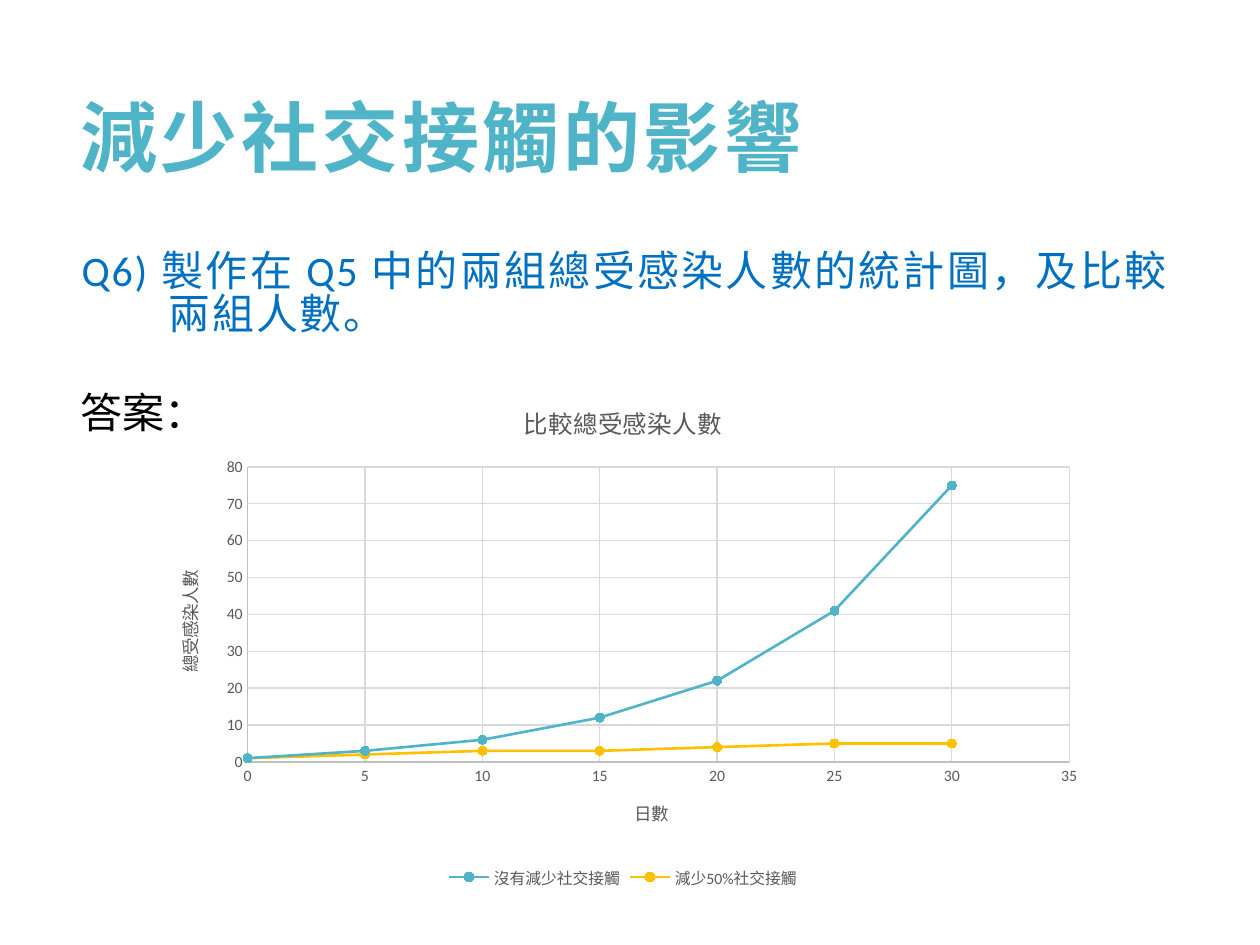
"""Build the slide on the effect of reducing social contact."""
from pptx import Presentation
from pptx.chart.data import XyChartData
from pptx.dml.color import RGBColor
from pptx.enum import chart as ch, text
from pptx.util import Inches, Pt

TEAL = RGBColor(0x50, 0xB4, 0xC8)
BLUE = RGBColor(0x00, 0x70, 0xC0)
GOLD = RGBColor(0xFF, 0xC0, 0x00)
BLACK = RGBColor(0x00, 0x00, 0x00)
GRAY = RGBColor(0x59, 0x59, 0x59)
AXIS = RGBColor(0xBF, 0xBF, 0xBF)
GRID = RGBColor(0xD9, 0xD9, 0xD9)
FONT = "Calibri"


def style(font, size, color, bold=False):
    font.name = FONT
    font.size = Pt(size)
    font.bold = bold
    font.color.rgb = color


def add_text(s, words, box, size, color, bold=False, spacing=0):
    tf = s.shapes.add_textbox(*map(Inches, box)).text_frame
    tf.word_wrap = True
    tf.text = words
    p = tf.paragraphs[0]
    r = p.runs[0]
    style(r.font, size, color, bold)
    if spacing:
        r.font._element.set("spc", str(spacing * 100))
    return tf


prs = Presentation()
prs.slide_width, prs.slide_height = Inches(10), Inches(7.5)
s = prs.slides.add_slide(prs.slide_layouts[6])

tf = add_text(s, "減少社交接觸的影響", (0.54, 0.55, 8.84, 1.05), 44, TEAL, True, 2)
tf.vertical_anchor = text.MSO_ANCHOR.MIDDLE

tf = add_text(s, "Q6) 製作在 Q5 中的兩組總受感染人數的統計圖，及比較兩組人數。",
              (0.55, 1.95, 8.82, 4.35), 24, BLUE, spacing=1)
p = tf.paragraphs[0]
p.alignment = text.PP_ALIGN.JUSTIFY
p.line_spacing = 0.85
p.space_before = Pt(13)
pPr = p._p.get_or_add_pPr()
pPr.set("marL", str(Inches(0.69)))
pPr.set("indent", str(-Inches(0.69)))

groups = [
    ("沒有減少社交接觸", TEAL, [1, 3, 6, 12, 22, 41, 75]),
    ("減少50%社交接觸", GOLD, [1, 2, 3, 3, 4, 5, 5]),
]
data = XyChartData()
for name, color, totals in groups:
    series = data.add_series(name)
    for day, total in zip(range(0, 31, 5), totals):
        series.add_data_point(day, total)
chart = s.shapes.add_chart(
    ch.XL_CHART_TYPE.XY_SCATTER_LINES, Inches(1.19), Inches(3.02),
    Inches(7.51), Inches(4.07), data).chart
style(chart.font, 10, BLACK)

chart.has_title = True
chart.chart_title.text_frame.text = "比較總受感染人數"
style(chart.chart_title.text_frame.paragraphs[0].runs[0].font, 14, GRAY)
chart.chart_title.include_in_layout = False

chart.has_legend = True
chart.legend.position = ch.XL_LEGEND_POSITION.BOTTOM
chart.legend.include_in_layout = False
style(chart.legend.font, 9, GRAY)

for axis, name, top, step in [(chart.category_axis, "日數", 35, 5),
                              (chart.value_axis, "總受感染人數", 80, 10)]:
    axis.minimum_scale, axis.maximum_scale, axis.major_unit = 0, top, step
    axis.major_tick_mark = axis.minor_tick_mark = ch.XL_TICK_MARK.NONE
    axis.has_major_gridlines = True
    for line, color in [(axis.format.line, AXIS),
                        (axis.major_gridlines.format.line, GRID)]:
        line.color.rgb = color
        line.width = Pt(0.75)
    style(axis.tick_labels.font, 9, GRAY)
    axis.tick_labels.number_format = "General"
    axis.tick_labels.number_format_is_linked = False
    axis.axis_title.text_frame.text = name
    style(axis.axis_title.text_frame.paragraphs[0].runs[0].font, 10, GRAY)

for series, (name, color, totals) in zip(chart.plots[0].series, groups):
    series.smooth = False
    series.format.line.color.rgb = color
    series.format.line.width = Pt(1.5)
    series.marker.style = ch.XL_MARKER_STYLE.CIRCLE
    series.marker.size = 5
    series.marker.format.fill.solid()
    series.marker.format.fill.fore_color.rgb = color
    series.marker.format.line.color.rgb = color

tf = add_text(s, "答案：", (0.54, 3.02, 1.29, 0.5), 24, BLACK)
tf.auto_size = text.MSO_AUTO_SIZE.SHAPE_TO_FIT_TEXT

prs.save("out.pptx")
